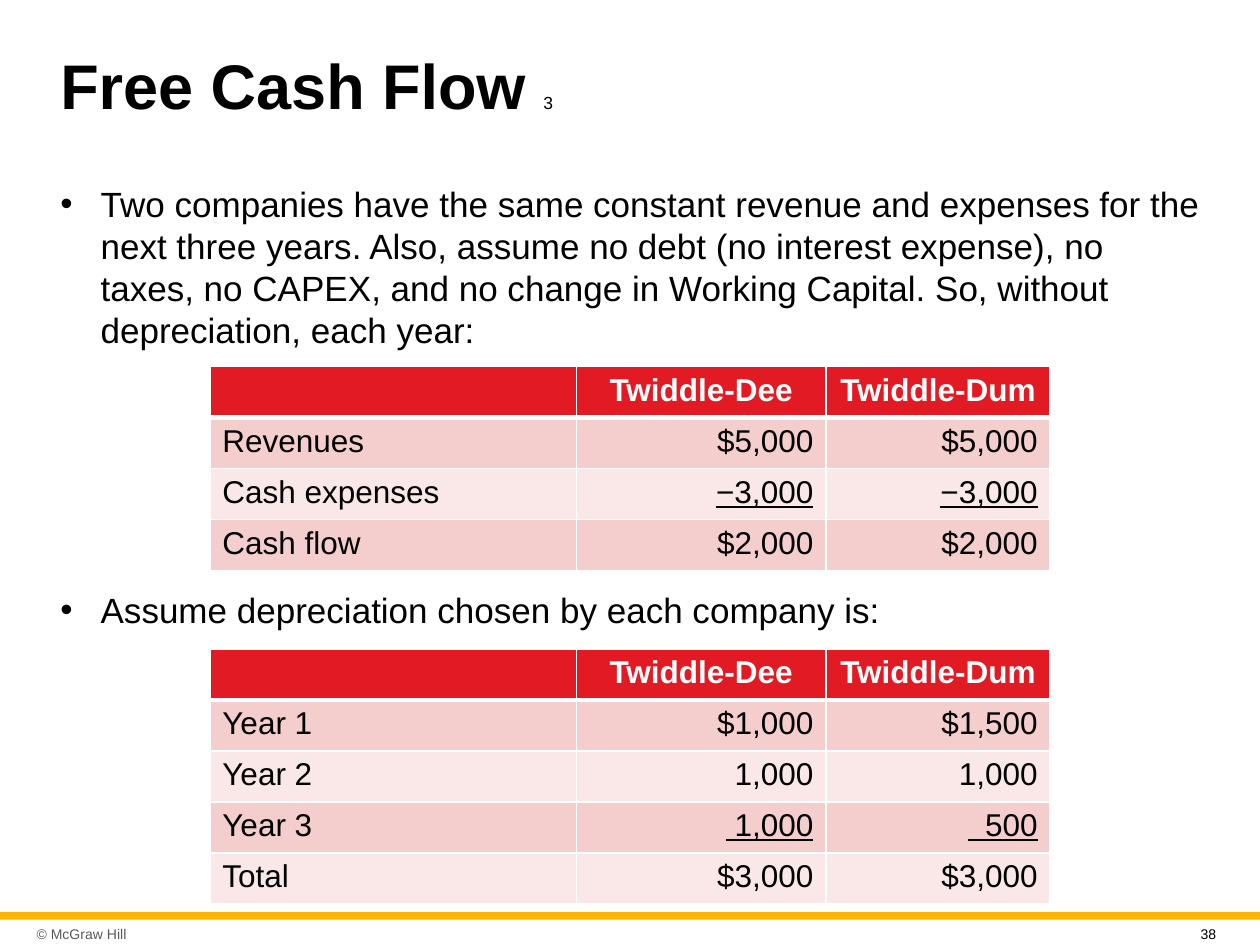
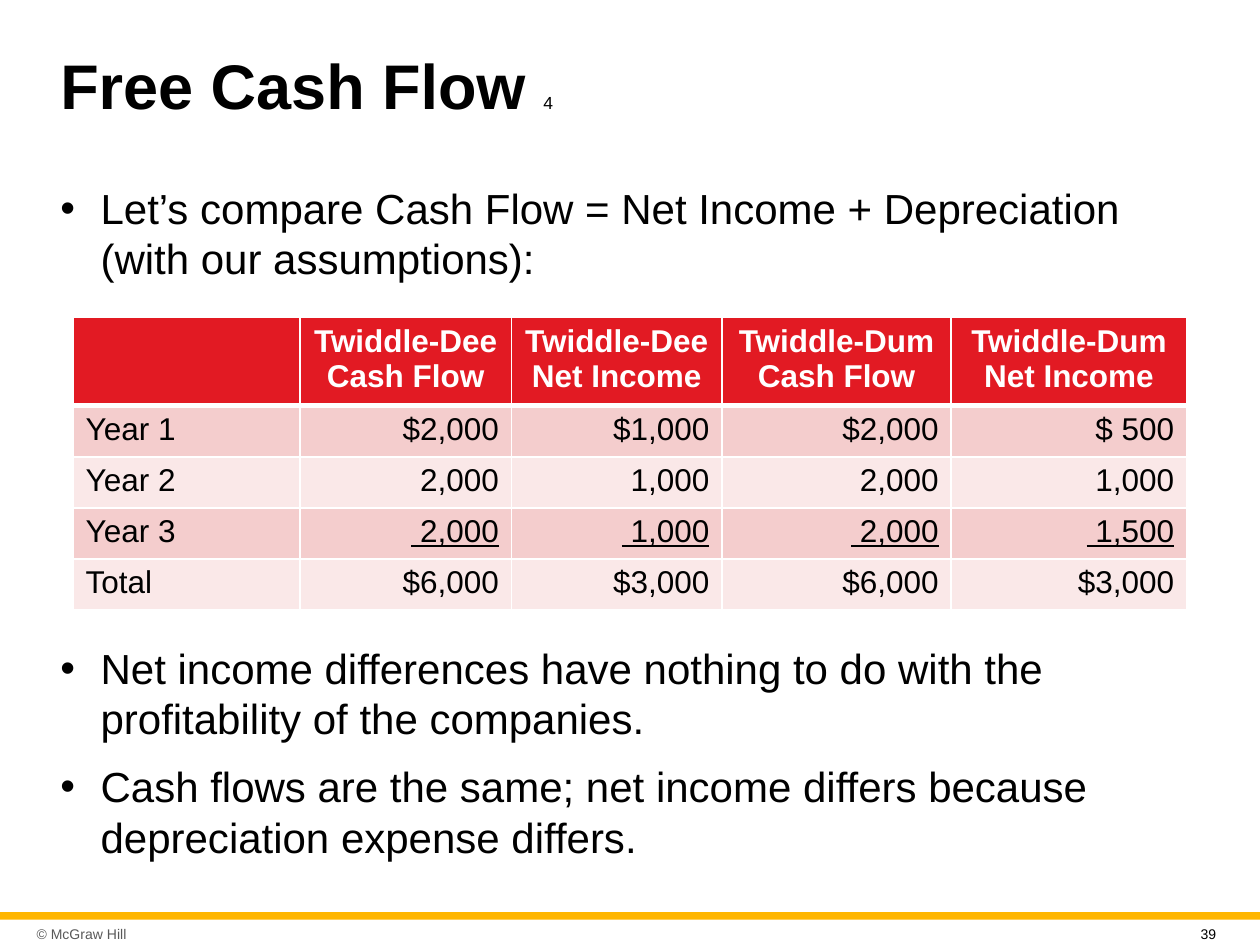
"""Builds two slides that compare cash flow and net income under different depreciation."""
from dataclasses import dataclass

from lxml import etree
from pptx import Presentation, util as u
from pptx.dml.color import RGBColor
from pptx.enum import shapes, text
from pptx.oxml.ns import qn


@dataclass(frozen=True)
class Theme:
    font: str = "Arial"
    ink: str = "000000"
    paper: str = "FFFFFF"
    muted: str = "595959"
    gold: str = "FFB600"
    header: str = "E21A23"
    bands: tuple = ("F4CDCD", "FAE8E8")
    title: int = 36
    sequence: int = 10
    cell: int = 18
    small: int = 8


THEME = Theme()
WIDTH, HEIGHT = 10, 7.5
MARGIN, BODY_WIDTH = 0.38, 9.25
ROW = 0.405
HANG = 0.32
EM, FIGURE = " ", " "
TOPIC = "Free Cash Flow "
COPYRIGHT = "© McGraw Hill"
PAIR = ["", "Twiddle-Dee", "Twiddle-Dum"]
PAIR_COLUMNS = [2.91, 1.98, 1.78]

SLIDES = [
    dict(sequence="3", number="38", size=20, bullets=[
        (1.4, 1.45, ["Two companies have the same constant revenue and expenses for the next "
                     "three years. Also, assume no debt (no interest expense), no taxes, no CAPEX, "
                     "and no change in Working Capital. So, without depreciation, each year:"]),
        (4.62, 0.44, ["Assume depreciation chosen by each company is:"]),
    ], tables=[
        dict(top=2.91, columns=PAIR_COLUMNS, header_height=ROW, underlined=2, rows=[
            PAIR,
            ["Revenues", "$5,000", "$5,000"],
            ["Cash expenses", "−3,000", "−3,000"],
            ["Cash flow", "$2,000", "$2,000"]]),
        dict(top=5.15, columns=PAIR_COLUMNS, header_height=ROW, underlined=3, rows=[
            PAIR,
            ["Year 1", "$1,000", "$1,500"],
            ["Year 2", "1,000", "1,000"],
            ["Year 3", EM + "1,000", EM + FIGURE + "500"],
            ["Total", "$3,000", "$3,000"]]),
    ]),
    dict(sequence="4", number="39", size=24, bullets=[
        (1.4, 0.94, ["Let’s compare Cash Flow = Net Income + Depreciation "
                     "(with our assumptions):"]),
        (5.05, 1.85, ["Net income differences have nothing to do with the profitability "
                      "of the companies.",
                      "Cash flows are the same; net income differs because depreciation "
                      "expense differs."]),
    ], tables=[
        dict(top=2.52, columns=[1.8, 1.68, 1.67, 1.82, 1.87], header_height=0.64,
             underlined=3, rows=[
                 ["", "Twiddle-Dee Cash Flow", "Twiddle-Dee Net Income",
                  "Twiddle-Dum Cash Flow", "Twiddle-Dum Net Income"],
                 ["Year 1", "$2,000", "$1,000", "$2,000", "$" + EM + "500"],
                 ["Year 2", "2,000", "1,000", "2,000", "1,000"],
                 ["Year 3", FIGURE + "2,000", EM + "1,000", FIGURE + "2,000", EM + "1,500"],
                 ["Total", "$6,000", "$3,000", "$6,000", "$3,000"]]),
    ]),
]


def style(font, size, color=THEME.ink, bold=False, underline=False):
    font.name, font.size, font.bold = THEME.font, u.Pt(size), bold
    font.underline = underline
    font.color.rgb = RGBColor.from_string(color)


def add_frame(slide, left, top, width, height, anchor=text.MSO_ANCHOR.TOP):
    frame = slide.shapes.add_textbox(*map(u.Inches, (left, top, width, height))).text_frame
    frame.word_wrap = True
    frame.vertical_anchor = anchor
    return frame


def add_label(slide, words, place, color, inset, anchor):
    frame = add_frame(slide, *place, anchor)
    frame.margin_left = frame.margin_right = u.Inches(inset)
    frame.margin_top = frame.margin_bottom = u.Inches(0.05)
    frame.text = words
    style(frame.paragraphs[0].runs[0].font, THEME.small, color)


def add_furniture(slide, number):
    band = slide.shapes.add_shape(shapes.MSO_SHAPE.RECTANGLE, 0, u.Inches(7.24),
                                  u.Inches(WIDTH), u.Inches(0.06))
    band.shadow.inherit = False
    band.fill.solid()
    band.fill.fore_color.rgb = RGBColor.from_string(THEME.gold)
    band.line.fill.background()
    add_label(slide, COPYRIGHT, (0.24, 7.29, 1.35, 0.24), THEME.muted,
              0.05, text.MSO_ANCHOR.MIDDLE)
    add_label(slide, number, (9.43, 7.3, 0.39, 0.18), THEME.ink,
              0.1, text.MSO_ANCHOR.TOP)


def add_title(slide, sequence):
    heading = add_frame(slide, MARGIN, 0.21, BODY_WIDTH, 0.99,
                        text.MSO_ANCHOR.MIDDLE).paragraphs[0]
    heading.line_spacing = 0.9
    for words, size, bold in ((TOPIC, THEME.title, True), (sequence, THEME.sequence, False)):
        run = heading.add_run()
        run.text = words
        style(run.font, size, bold=bold)


def add_bullets(slide, top, height, points, size):
    frame = add_frame(slide, MARGIN, top, BODY_WIDTH, height)
    frame.text = "\n".join(points)
    for index, paragraph in enumerate(frame.paragraphs):
        props = paragraph._p.get_or_add_pPr()
        props.set("marL", str(u.Inches(HANG)))
        props.set("indent", str(-u.Inches(HANG)))
        etree.SubElement(props, qn("a:buFont"), typeface=THEME.font)
        etree.SubElement(props, qn("a:buChar"), char="•")
        paragraph.space_before = u.Pt(10 if index else 0)
        style(paragraph.runs[0].font, size)


def add_borders(cell, bottom):
    props = cell._tc.get_or_add_tcPr()
    for position, (side, points) in enumerate((("L", 1), ("R", 1), ("T", 1), ("B", bottom))):
        line = etree.Element(qn(f"a:ln{side}"), w=str(u.Pt(points)))
        fill = etree.SubElement(line, qn("a:solidFill"))
        etree.SubElement(fill, qn("a:srgbClr"), val=THEME.paper)
        props.insert(position, line)


def add_grid(slide, top, columns, header_height, underlined, rows):
    width = sum(columns)
    grid = slide.shapes.add_table(
        len(rows), len(columns), u.Inches((WIDTH - width) / 2), u.Inches(top),
        u.Inches(width), u.Inches(header_height + ROW * (len(rows) - 1))).table
    for column, share in zip(grid.columns, columns):
        column.width = u.Inches(share)
    for r, row in enumerate(rows):
        grid.rows[r].height = u.Inches(ROW if r else header_height)
        for c, words in enumerate(row):
            cell = grid.cell(r, c)
            cell.fill.solid()
            cell.fill.fore_color.rgb = RGBColor.from_string(
                THEME.bands[(r - 1) % 2] if r else THEME.header)
            add_borders(cell, 1 if r else 3)
            cell.text = words
            paragraph = cell.text_frame.paragraphs[0]
            if c:
                paragraph.alignment = text.PP_ALIGN.RIGHT if r else text.PP_ALIGN.CENTER
            style(paragraph.font, THEME.cell)
            for run in paragraph.runs:
                style(run.font, THEME.cell, THEME.ink if r else THEME.paper,
                      bold=r == 0, underline=r == underlined and c > 0)


def main():
    deck = Presentation()
    deck.slide_width, deck.slide_height = u.Inches(WIDTH), u.Inches(HEIGHT)
    for content in SLIDES:
        slide = deck.slides.add_slide(deck.slide_layouts[6])
        add_furniture(slide, content["number"])
        add_title(slide, content["sequence"])
        for top, height, points in content["bullets"]:
            add_bullets(slide, top, height, points, content["size"])
        for table in content["tables"]:
            add_grid(slide, **table)
    deck.save("out.pptx")


if __name__ == "__main__":
    main()
